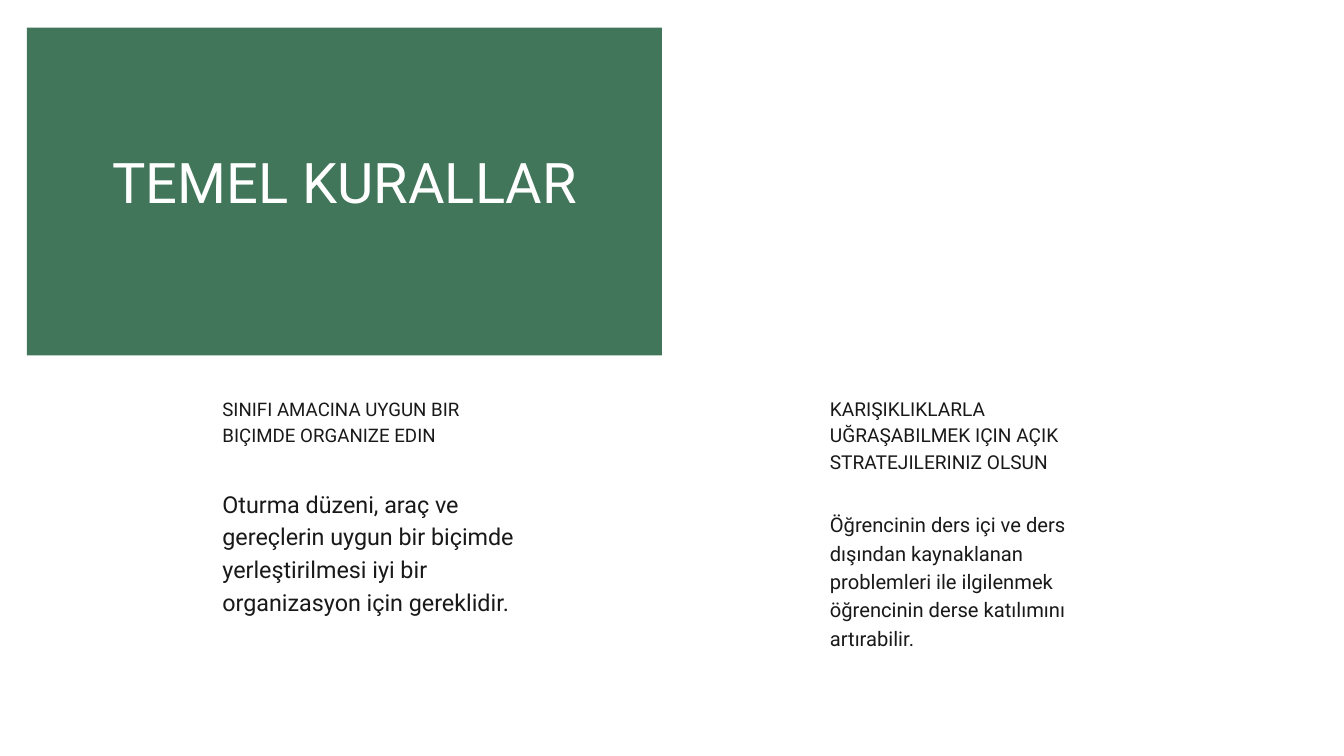
from dataclasses import dataclass

from pptx import Presentation
from pptx import util as u
from pptx.dml.color import RGBColor
from pptx.enum import shapes, text


@dataclass(frozen=True)
class Theme:
    font: str = "Roboto"
    green: str = "41765A"
    white: str = "FFFFFF"
    ink: str = "191919"
    title: tuple = (60, 72)
    left_head: tuple = (20, 28)
    left_body: tuple = (25, 35)
    right_head: tuple = (20.5, 28.7)
    right_body: tuple = (21.6, 30.3)


THEME = Theme()


def place(box):
    return [u.Inches(n) for n in box]


def add_panel(slide, box, color):
    panel = slide.shapes.add_shape(shapes.MSO_SHAPE.RECTANGLE, *place(box))
    panel.shadow.inherit = False
    panel.fill.solid()
    panel.fill.fore_color.rgb = RGBColor.from_string(color)
    panel.line.fill.background()


def add_label(slide, box, words, style, color, align=text.PP_ALIGN.LEFT):
    size, pitch = style
    frame = slide.shapes.add_textbox(*place(box)).text_frame
    frame.word_wrap = True
    frame.auto_size = text.MSO_AUTO_SIZE.SHAPE_TO_FIT_TEXT
    frame.margin_left = frame.margin_right = 0
    frame.margin_top = frame.margin_bottom = 0
    para = frame.paragraphs[0]
    para.alignment = align
    para.line_spacing = u.Pt(pitch)
    run = para.add_run()
    run.text = words
    run.font.name = THEME.font
    run.font.size = u.Pt(size)
    run.font.color.rgb = RGBColor.from_string(color)


def add_rule(slide, left, width, head, body):
    for top, height, words, style in (body, head):
        add_label(slide, (left, top, width, height), words, style, THEME.ink)


def main():
    deck = Presentation()
    deck.slide_width = u.Inches(20)
    deck.slide_height = u.Inches(11.25)
    slide = deck.slides.add_slide(deck.slide_layouts[6])

    add_panel(slide, (0.4, 0.41, 9.45, 4.88), THEME.green)
    add_label(slide, (1.26, 2.19, 7.74, 1), "TEMEL KURALLAR",
              THEME.title, THEME.white, text.PP_ALIGN.CENTER)
    add_rule(
        slide, 3.31, 4.51,
        (5.86, 0.75, "SINIFI AMACINA UYGUN BIR BIÇIMDE ORGANIZE EDIN",
         THEME.left_head),
        (7.22, 2.76, "Oturma düzeni, araç ve gereçlerin uygun bir biçimde "
         "yerleştirilmesi iyi bir organizasyon için gereklidir.",
         THEME.left_body))
    add_rule(
        slide, 12.35, 4.17,
        (5.85, 1.17, "KARIŞIKLIKLARLA UĞRAŞABILMEK IÇIN AÇIK "
         "STRATEJILERINIZ OLSUN", THEME.right_head),
        (7.57, 2.37, "Öğrencinin ders içi ve ders dışından kaynaklanan "
         "problemleri ile ilgilenmek öğrencinin derse katılımını artırabilir.",
         THEME.right_body))
    deck.save("out.pptx")


if __name__ == "__main__":
    main()
